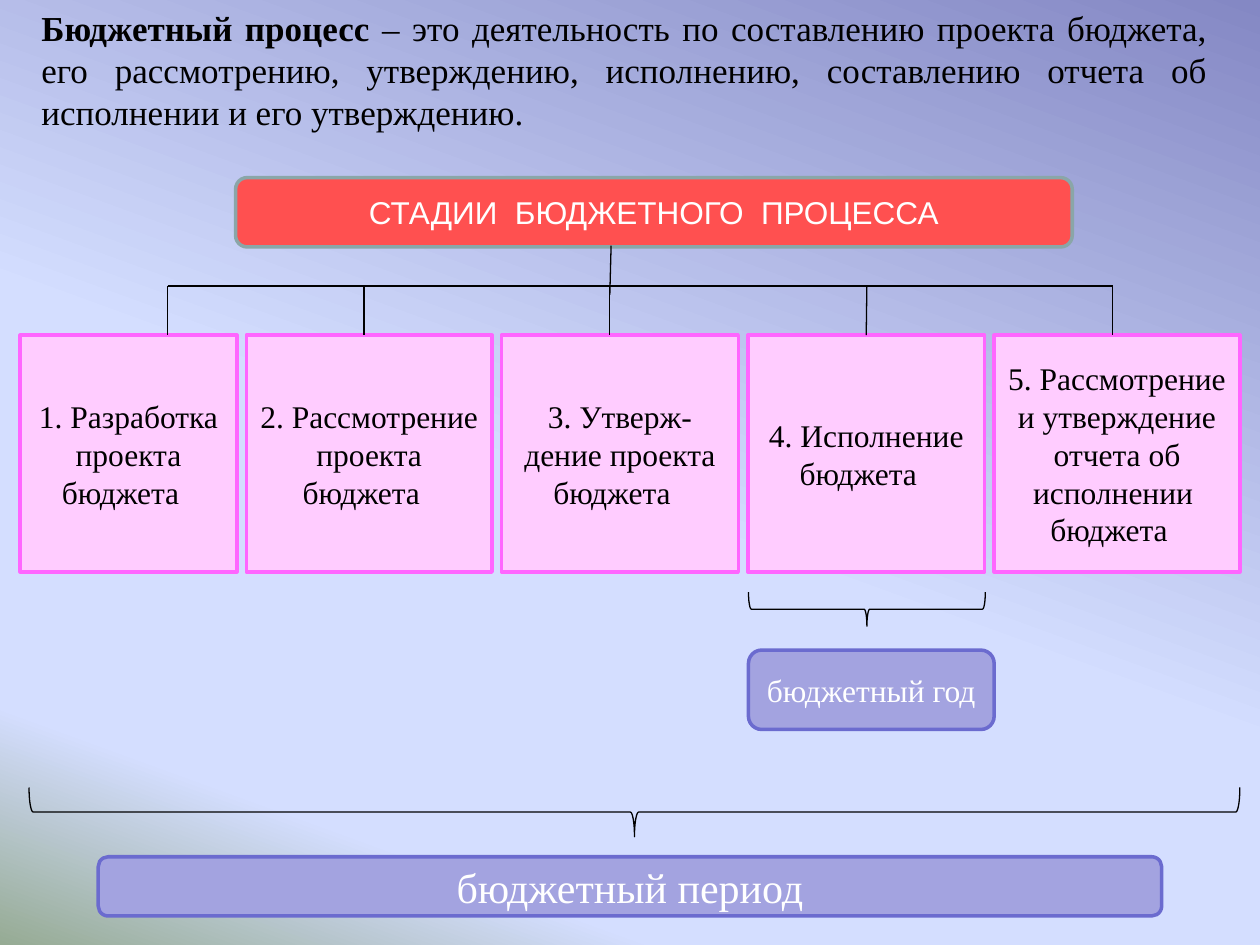
from copy import deepcopy
from lxml.etree import SubElement
from pptx import Presentation
from pptx.dml.color import RGBColor
from pptx.enum.shapes import MSO_CONNECTOR as Link, MSO_SHAPE as Kind
from pptx.enum.text import MSO_ANCHOR as Anchor, MSO_AUTO_SIZE as Fit, PP_ALIGN as Align
from pptx.oxml.ns import qn
from pptx.util import Inches, Pt

# Content
TERM = "Бюджетный процесс "
MEANING = ("– это деятельность по составлению проекта бюджета, его рассмотрению, "
           "утверждению, исполнению, составлению отчета об исполнении и его утверждению.")
HEAD = "СТАДИИ  БЮДЖЕТНОГО  ПРОЦЕССА"
STAGES = [  # text, box width, x of the stem above
    ("1. Разработка проекта бюджета  ", 1.72, 1.33),
    ("2. Рассмотрение проекта бюджета  ", 1.95, 2.89),
    ("3. Утверж-дение проекта бюджета  ", 1.88, 4.84),
    ("4. Исполнение бюджета  ", 1.88, 6.88),
    ("5. Рассмотрение и утверждение отчета об исполнении  бюджета  ", 1.95, 8.83),
]
SPANS = [  # text, frame, size, brace frame
    ("бюджетный год", (5.94, 5.16, 1.95, 0.63), 18, (5.94, 4.7, 1.88, 0.27)),
    ("бюджетный период", (0.78, 6.8, 8.44, 0.47), 24, (0.23, 6.25, 9.61, 0.39)),
]
COLORS = {
    "ink": "000000", "white": "FFFFFF", "head": "FF5050", "edge": "8AA6A8",
    "stage": "FFCCFF", "pink": "FF66FF", "span": "A3A3E0", "violet": "6B6BCF",
}
SKY = [(0, "8488C4"), (0.53, "D4DEFF"), (0.83, "D4DEFF"), (1, "96AB94")]
SERIF, SANS = "Times New Roman", "Arial"
LEFT, RIGHT, TOP, TALL = 0.16, 9.84, 2.66, 1.88
BAR = 2.27


def rgb(name):
    return RGBColor.from_string(COLORS[name])


def style(para, size, face, color, align):
    para.alignment = align
    para.font.size, para.font.name = Pt(size), face
    para.font.color.rgb = rgb(color)


def box(kind, frame, text, fill, edge, size=18, face=SERIF, color="white"):
    shape = slide.shapes.add_shape(kind, *map(Inches, frame))
    shape.shadow.inherit = False
    shape.fill.solid()
    shape.fill.fore_color.rgb = rgb(fill)
    shape.line.color.rgb, shape.line.width = rgb(edge), Pt(2)
    body = shape.text_frame
    body.word_wrap, body.vertical_anchor = True, Anchor.MIDDLE
    body.text = text
    style(body.paragraphs[0], size, face, color, Align.CENTER)
    return shape


def line(*ends):
    rule = slide.shapes.add_connector(Link.STRAIGHT, *map(Inches, ends))
    rule.line.color.rgb, rule.line.width = rgb("ink"), Pt(0.75)
    SubElement(rule.element.spPr, qn("a:effectLst"))
    return rule


def brace(x, y, wide, high):
    # A right brace turned a quarter, so width and height swap about the centre
    shift = (wide - high) / 2
    frame = (x + shift, y - shift, high, wide)
    shape = slide.shapes.add_shape(Kind.RIGHT_BRACE, *map(Inches, frame))
    shape.rotation = 90
    shape.shadow.inherit = False
    shape.fill.background()
    shape.line.color.rgb, shape.line.width = rgb("ink"), Pt(0.75)


deck = Presentation()
deck.slide_width, deck.slide_height = Inches(10), Inches(7.5)
slide = deck.slides.add_slide(deck.slide_layouts[6])

# Background
back = slide.background.fill
back.gradient()
back.gradient_angle = 250
stops = next(slide.element.iter(qn("a:gsLst")))
while len(stops) < len(SKY):
    stops.append(deepcopy(stops[0]))
for stop, (place, color) in zip(back.gradient_stops, SKY):
    stop.position = place
    stop.color.rgb = RGBColor.from_string(color)

# Definition
note = slide.shapes.add_textbox(*map(Inches, (0.23, 0, 9.45, 1.11))).text_frame
note.word_wrap, note.auto_size = True, Fit.SHAPE_TO_FIT_TEXT
para = note.paragraphs[0]
style(para, 20, SERIF, "ink", Align.JUSTIFY)
for text, bold in ((TERM, True), (MEANING, False)):
    run = para.add_run()
    run.text, run.font.bold = text, bold

# Heading and the bar below it
box(Kind.ROUNDED_RECTANGLE, (1.87, 1.41, 6.64, 0.55), HEAD, "head", "edge", face=SANS)
line(4.85, 1.95, 4.84, 2.34)
line(STAGES[0][2], BAR, STAGES[-1][2], BAR)

# Stages with their stems
gap = (RIGHT - LEFT - sum(wide for _, wide, _ in STAGES)) / (len(STAGES) - 1)
x = LEFT
for text, wide, stem in STAGES:
    stage = box(Kind.RECTANGLE, (x, TOP, wide, TALL), text, "stage", "pink", color="ink")
    rule = line(stem, BAR, stem, TOP)
    if abs(x + wide / 2 - stem) < 0.02:
        rule.end_connect(stage, 0)
    x += wide + gap

# Periods under their braces
for text, frame, size, span in SPANS:
    box(Kind.ROUNDED_RECTANGLE, frame, text, "span", "violet", size)
    brace(*span)

deck.save("out.pptx")
